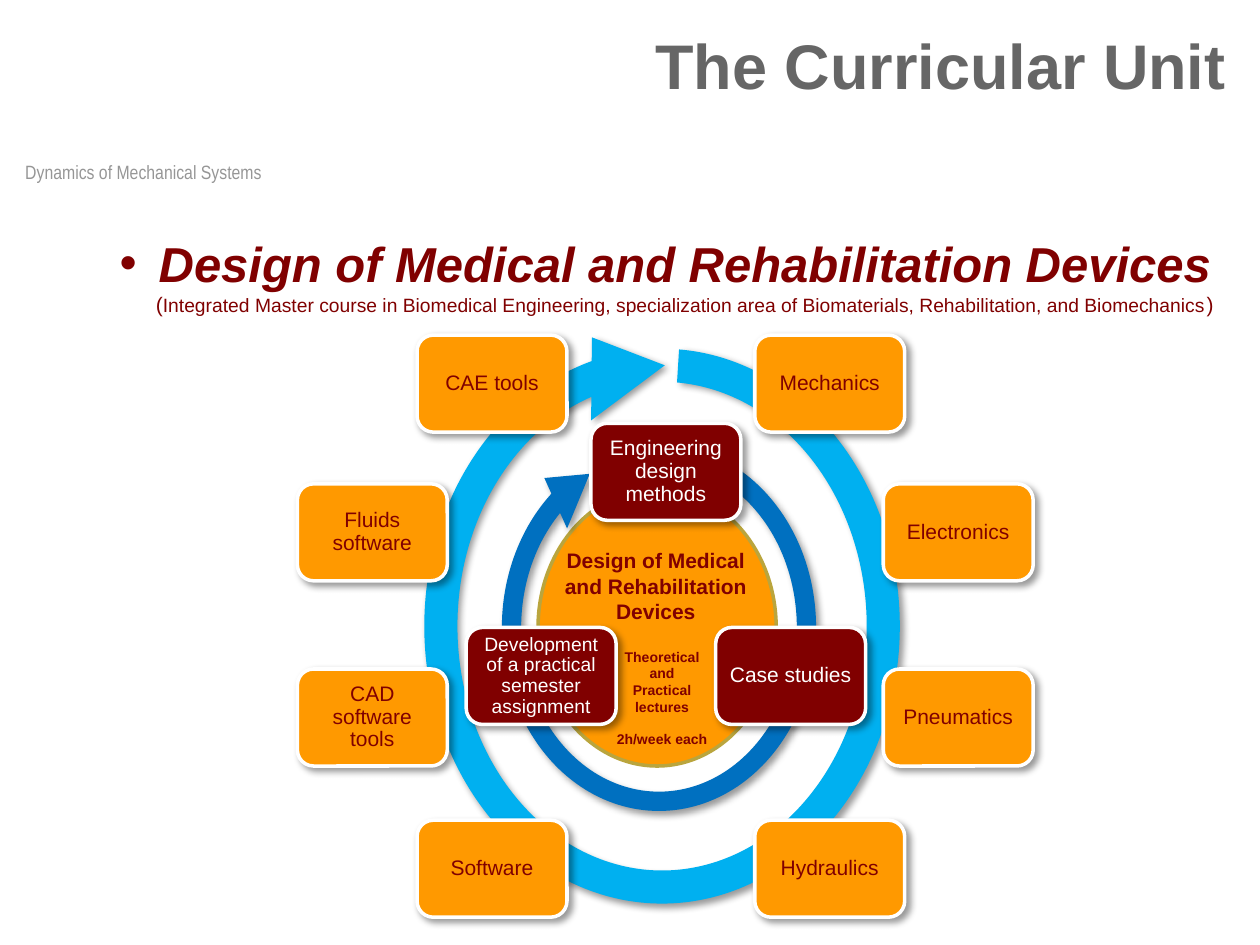
from dataclasses import dataclass

import pptx
import pptx.dml.color
import pptx.enum.shapes
import pptx.enum.text
import pptx.oxml
import pptx.oxml.ns
import pptx.util

Inches = pptx.util.Inches
Pt = pptx.util.Pt
Align = pptx.enum.text.PP_ALIGN
Preset = pptx.enum.shapes.MSO_SHAPE

COLORS = {
    "title": "666666",
    "label": "969696",
    "maroon": "800000",
    "orange": "FF9900",
    "olive": "BAA53D",
    "cyan": "00B0F0",
    "blue": "0070C0",
    "white": "FFFFFF",
}
BOX_WIDTH, BOX_HEIGHT = 1.19, 0.77
TOPIC_ROWS = (2.66, 3.84, 5.31, 6.51)
LEFT_OUTER, LEFT_INNER, RIGHT_INNER, RIGHT_OUTER = 2.36, 3.31, 5.99, 7.01
SHADOW = (
    '<a:effectLst xmlns:a="http://schemas.openxmlformats.org/drawingml/2006/main">'
    '<a:outerShdw blurRad="50800" dist="38100" dir="2700000" algn="tl" rotWithShape="0">'
    '<a:srgbClr val="000000"><a:alpha val="40000"/></a:srgbClr>'
    "</a:outerShdw></a:effectLst>"
)


@dataclass(frozen=True)
class Box:
    text: str
    left: float
    top: float
    fill: str = "orange"
    ink: str = "maroon"
    size: int = 12


@dataclass(frozen=True)
class Ring:
    left: float
    top: float
    width: float
    height: float
    fill: str
    adjustments: tuple[float, ...]


RINGS = (
    Ring(3.17, 2.57, 4.17, 4.8, "cyan", (0.063, 9.904, 152.451, 164.11, 0.079)),
    Ring(3.84, 3.38, 2.78, 3.2, "blue", (0.055, 9.285, 138.152, 177.13, 0.079)),
)
METHODS = (
    Box("Engineering design methods", 4.69, 3.36, "maroon", "white"),
    Box("Case studies", 5.68, 4.98, "maroon", "white"),
    Box("Development of a practical semester assignment", 3.7, 4.98, "maroon", "white", 11),
)
RIGHT_TOPICS = ("Mechanics", "Electronics", "Pneumatics", "Hydraulics")
LEFT_TOPICS = ("CAE tools", "Fluids software", "CAD software tools", "Software")
RIGHT_COLUMNS = (RIGHT_INNER, RIGHT_OUTER, RIGHT_OUTER, RIGHT_INNER)
LEFT_COLUMNS = (LEFT_INNER, LEFT_OUTER, LEFT_OUTER, LEFT_INNER)
TOPICS = [
    Box(*topic)
    for topic in (
        *zip(RIGHT_TOPICS, RIGHT_COLUMNS, TOPIC_ROWS),
        *zip(LEFT_TOPICS, LEFT_COLUMNS, TOPIC_ROWS),
    )
]


def rgb(name: str) -> pptx.dml.color.RGBColor:
    return pptx.dml.color.RGBColor.from_string(COLORS[name])


def set_font(font, size: float, color: str, bold: bool = False, face: str = "Arial") -> None:
    font.name = face
    font.size = Pt(size)
    font.bold = bold
    font.color.rgb = rgb(color)


def place(shape, left: float, top: float, width: float, height: float) -> None:
    shape.left, shape.top = Inches(left), Inches(top)
    shape.width, shape.height = Inches(width), Inches(height)


def set_margins(frame, horizontal: float, vertical: float) -> None:
    frame.margin_left = frame.margin_right = Inches(horizontal)
    frame.margin_top = frame.margin_bottom = Inches(vertical)


def set_indent(paragraph, left: float, first: float = 0) -> None:
    properties = paragraph._p.get_or_add_pPr()
    properties.set("marL", str(Inches(left)))
    properties.set("indent", str(Inches(first)))


def add_preset(slide, preset, left, top, width, height, fill: str):
    shape = slide.shapes.add_shape(
        preset, Inches(left), Inches(top), Inches(width), Inches(height)
    )
    shape.shadow.inherit = False
    shape.fill.solid()
    shape.fill.fore_color.rgb = rgb(fill)
    shape.line.fill.background()
    return shape


def outline(shape, color: str) -> None:
    shape.line.color.rgb = rgb(color)
    shape.line.width = Pt(2)


def cast_shadow(shape) -> None:
    properties = shape._element.spPr
    properties.replace(
        properties.find(pptx.oxml.ns.qn("a:effectLst")), pptx.oxml.parse_xml(SHADOW)
    )


def draw_ring(slide, ring: Ring) -> None:
    arrow = add_preset(
        slide, Preset.CIRCULAR_ARROW, ring.left, ring.top, ring.width, ring.height, ring.fill
    )
    for index, value in enumerate(ring.adjustments):
        arrow.adjustments[index] = value
    cast_shadow(arrow)


def draw_box(slide, box: Box) -> None:
    card = add_preset(
        slide, Preset.ROUNDED_RECTANGLE, box.left, box.top, BOX_WIDTH, BOX_HEIGHT, box.fill
    )
    outline(card, "white")
    cast_shadow(card)
    frame = card.text_frame
    frame.word_wrap = True
    frame.vertical_anchor = pptx.enum.text.MSO_ANCHOR.MIDDLE
    set_margins(frame, 0.06, 0.06)
    frame.text = box.text
    paragraph = frame.paragraphs[0]
    paragraph.alignment = Align.CENTER
    paragraph.line_spacing = 0.9
    set_font(paragraph.font, box.size, box.ink)


def draw_heading(slide) -> None:
    title = slide.shapes.title
    place(title, 3.28, 0.16, 6.55, 1.25)
    title.text_frame.text = "The Curricular Unit"
    title.text_frame.vertical_anchor = pptx.enum.text.MSO_ANCHOR.TOP
    heading = title.text_frame.paragraphs[0]
    heading.alignment = Align.RIGHT
    set_font(heading.font, 36, "title", bold=True)

    label = slide.shapes.add_textbox(Inches(0.2), Inches(1.27), Inches(2.32), Inches(0.18))
    set_margins(label.text_frame, 0, 0)
    label.text_frame.word_wrap = True
    label.text_frame.text = "Dynamics of Mechanical Systems"
    set_font(label.text_frame.paragraphs[0].font, 11, "label", face="Arial Narrow")


def draw_course(slide) -> None:
    course = slide.placeholders[1]
    place(course, 0.73, 1.8, 9.1, 0.77)
    course.text_frame.auto_size = pptx.enum.text.MSO_AUTO_SIZE.NONE
    paragraph = course.text_frame.paragraphs[0]
    paragraph.alignment = Align.CENTER
    paragraph.space_before = Pt(0)
    paragraph.space_after = Pt(8)
    set_indent(paragraph, 0.31, -0.31)
    for text, size, strong in (
        ("Design of Medical and Rehabilitation Devices ", 28, True),
        ("(", 12, False),
        ("Integrated Master course in Biomedical Engineering, specialization area of "
         "Biomaterials, Rehabilitation, and Biomechanics", 11, False),
        (")", 12, False),
    ):
        run = paragraph.add_run()
        run.text = text
        set_font(run.font, size, "maroon", bold=strong)
        run.font.italic = strong


def draw_core(slide) -> None:
    core = add_preset(slide, Preset.OVAL, 4.27, 3.88, 1.89, 2.2, "orange")
    outline(core, "olive")
    lectures = slide.shapes.add_textbox(Inches(4.34), Inches(4.3), Inches(1.73), Inches(1.72))
    frame = lectures.text_frame
    frame.word_wrap = True
    for index, (text, size, gap, indent) in enumerate((
        ("Design of Medical and Rehabilitation Devices", 12, 0, 0),
        ("Theoretical", 8, 14, 0.1),
        ("and", 8, 0, 0.1),
        ("Practical", 8, 0, 0.1),
        ("lectures", 8, 0, 0.1),
        ("2h/week each", 8, 9, 0.1),
    )):
        paragraph = frame.add_paragraph() if index else frame.paragraphs[0]
        paragraph.text = text
        paragraph.alignment = Align.CENTER
        paragraph.space_before = Pt(gap)
        set_indent(paragraph, indent)
        set_font(paragraph.font, size, "maroon", bold=True)


def main() -> None:
    deck = pptx.Presentation()
    deck.slide_width, deck.slide_height = Inches(10), Inches(7.5)
    slide = deck.slides.add_slide(deck.slide_layouts[1])
    draw_heading(slide)
    draw_course(slide)
    draw_core(slide)
    for ring in RINGS:
        draw_ring(slide, ring)
    for box in (*METHODS, *TOPICS):
        draw_box(slide, box)
    deck.save("out.pptx")


if __name__ == "__main__":
    main()
